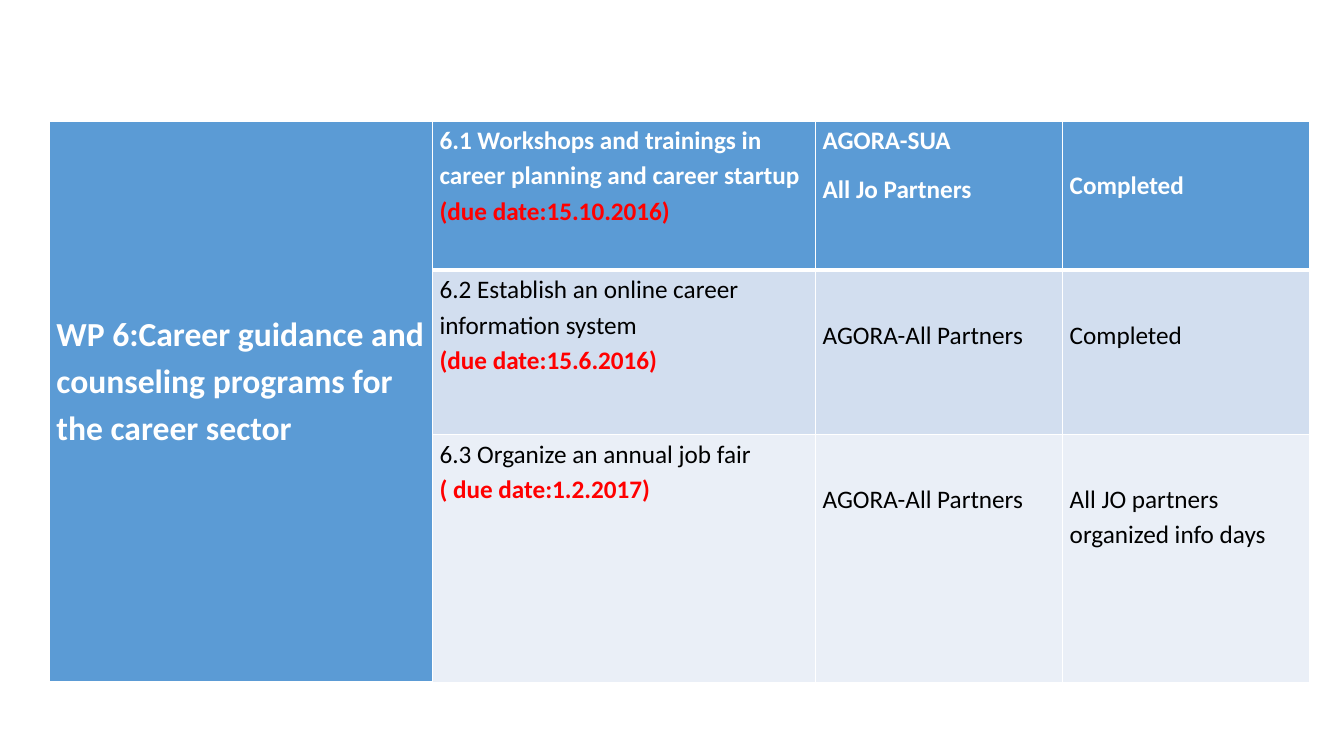
from lxml import etree
from pptx import Presentation
from pptx.dml.color import RGBColor
from pptx.enum.text import MSO_ANCHOR
from pptx.oxml.ns import qn
from pptx.util import Inches, Pt

MIDDLE, TOP = MSO_ANCHOR.MIDDLE, MSO_ANCHOR.TOP
BLANK_LAYOUT = 6
WHITE, BLACK, RED, BLUE = "FFFFFF", "000000", "FF0000", "5B9BD5"
ROW_FILLS = [BLUE, "D2DEEF", "EAEFF7"]
COLUMN_WIDTHS = [3.8, 3.8, 2.45, 2.45]
ROW_HEIGHTS = [1.48, 1.63, 2.46]
LOWERED = 0.45
WORK_PACKAGE = "WP 6:Career guidance and counseling programs for the career sector"
ACTIVITIES = [
    ("6.1 Workshops and trainings in career planning and career startup ",
     "(due date:15.10.2016)", ["AGORA-SUA", "All Jo Partners"], "Completed"),
    ("6.2 Establish an online career information system",
     "(due date:15.6.2016)", ["AGORA-All Partners"], "Completed"),
    ("6.3 Organize an annual job fair",
     "( due date:1.2.2017)", ["AGORA-All Partners"],
     "All JO partners organized info days"),
]


def color(value):
    return RGBColor.from_string(value)


def add_borders(cell, row):
    props = cell._tc.get_or_add_tcPr()
    widths = {"a:lnL": 1, "a:lnR": 1,
              "a:lnT": 3 if row == 1 else 1,
              "a:lnB": 3 if row == 0 else 1}
    for tag, width in widths.items():
        line = etree.SubElement(props, qn(tag), w=str(Pt(width)))
        fill = etree.SubElement(line, qn("a:solidFill"))
        etree.SubElement(fill, qn("a:srgbClr"), val=WHITE)


def style_cell(cell, row, fill):
    add_borders(cell, row)
    cell.fill.solid()
    cell.fill.fore_color.rgb = color(fill)
    cell.margin_left = cell.margin_right = Inches(0.07)
    cell.margin_top = cell.margin_bottom = 0
    cell.vertical_anchor = TOP


def format_span(span, size, shade, bold):
    span.font.name = "Calibri"
    span.font.size = Pt(size)
    span.font.bold = bold
    span.font.color.rgb = color(shade)


def write_lines(cell, lines, shade, bold, size=18, after=0):
    cell.text_frame.text = "\n".join(lines)
    for para in cell.text_frame.paragraphs:
        para.line_spacing = 1.15
        para.space_after = Pt(after)
        for span in para.runs:
            format_span(span, size, shade, bold)


def write_activity(cell, task, due, shade, bold):
    write_lines(cell, [task, due], shade, bold)
    format_span(cell.text_frame.paragraphs[-1].runs[0], 18, RED, True)


def add_plan_table(page):
    frame = page.shapes.add_table(
        len(ROW_HEIGHTS), len(COLUMN_WIDTHS), Inches(0.49), Inches(1.2),
        Inches(sum(COLUMN_WIDTHS)), Inches(sum(ROW_HEIGHTS)))
    table = frame.table
    table.horz_banding = False
    for column, width in zip(table.columns, COLUMN_WIDTHS):
        column.width = Inches(width)
    for row, height in zip(table.rows, ROW_HEIGHTS):
        row.height = Inches(height)
    for index, row in enumerate(table.rows):
        for column, cell in enumerate(row.cells):
            style_cell(cell, index, ROW_FILLS[index] if column else BLUE)
    return table


def main():
    deck = Presentation()
    deck.slide_width, deck.slide_height = Inches(13.33), Inches(7.5)
    page = deck.slides.add_slide(deck.slide_layouts[BLANK_LAYOUT])
    table = add_plan_table(page)

    package = table.cell(0, 0)
    package.merge(table.cell(len(ACTIVITIES) - 1, 0))
    write_lines(package, [WORK_PACKAGE], WHITE, True, size=24)
    package.vertical_anchor = MIDDLE
    package.margin_bottom = Inches(LOWERED)

    for row, (task, due, partners, status) in enumerate(ACTIVITIES):
        heading = row == 0
        shade = WHITE if heading else BLACK
        write_activity(table.cell(row, 1), task, due, shade, heading)
        for column, lines in ((2, partners), (3, [status])):
            cell = table.cell(row, column)
            write_lines(cell, lines, shade, heading, after=10)
            if len(lines) == 1:
                cell.margin_top = Inches(LOWERED)

    deck.save("out.pptx")


if __name__ == "__main__":
    main()
